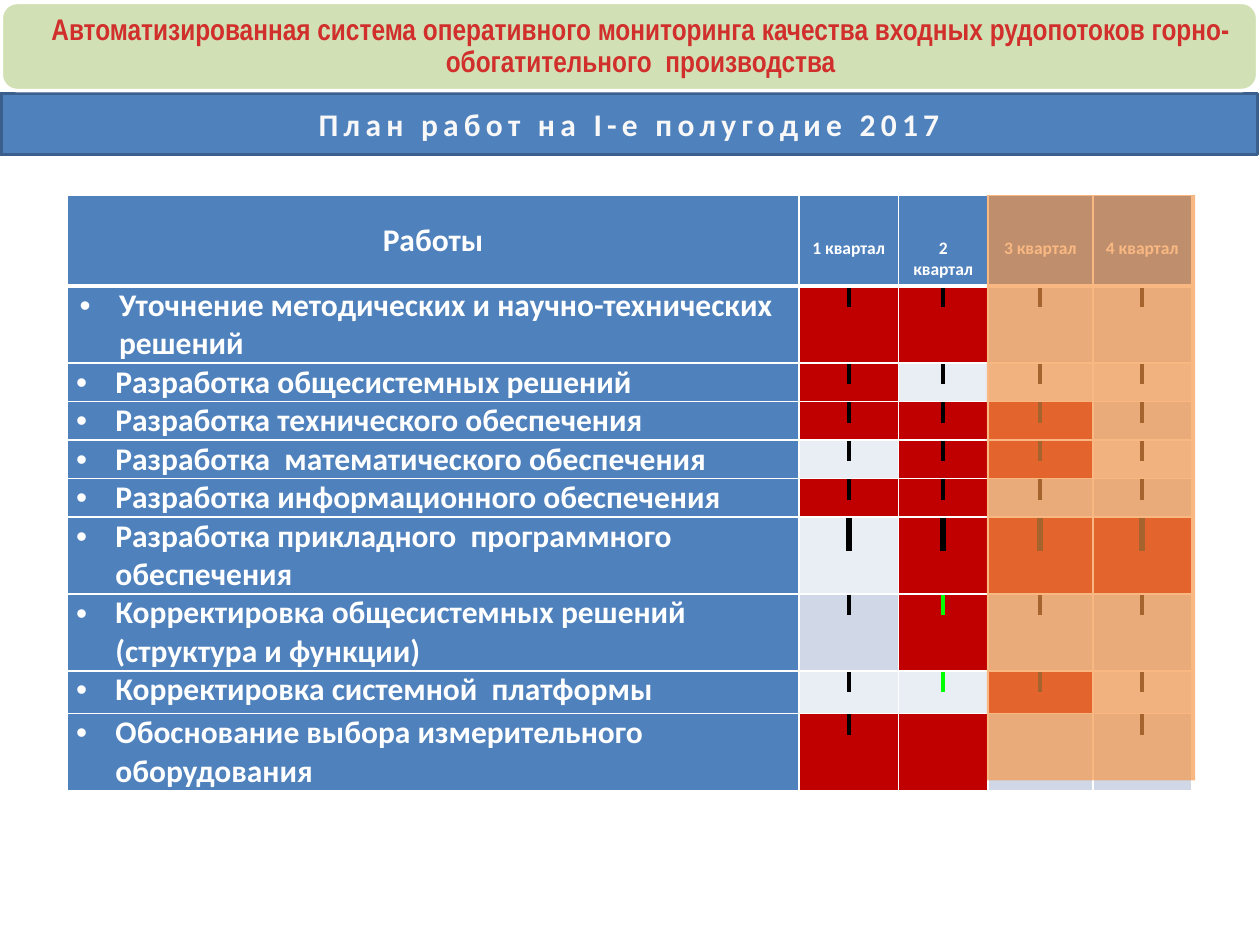
from lxml import etree
from pptx import Presentation
from pptx.dml.color import RGBColor
from pptx.enum import shapes, text
from pptx.oxml.ns import qn
from pptx.util import Pt

COLORS = {
    "blue": "4F81BD", "navy": "3A5F8C", "white": "FFFFFF", "pale": "F8F8F8",
    "red": "C00000", "odd": "D0D8E8", "even": "E9EDF4", "black": "000000",
    "lime": "00FF00", "green": "D2E1B5", "heading": "D02F2C", "orange": "F79646",
}


def rgb(name):
    return RGBColor.from_string(COLORS[name])


def write(paragraph, content, size=18, color="white", font="Calibri",
          align=None, spacing=0, highlight=None):
    paragraph.alignment = align
    run = paragraph.add_run()
    run.text = content
    run.font.size, run.font.bold, run.font.name = Pt(size), True, font
    run.font.color.rgb = rgb(color)
    properties = run.font._element
    if spacing:
        properties.set("spc", str(spacing * 100))
    if highlight:
        mark = etree.Element(qn("a:highlight"))
        etree.SubElement(mark, qn("a:srgbClr"), val=COLORS[highlight])
        properties.find(qn("a:solidFill")).addnext(mark)


CENTER = text.PP_ALIGN.CENTER
MIDDLE = text.MSO_ANCHOR.MIDDLE

deck = Presentation()
deck.slide_width, deck.slide_height = Pt(720), Pt(540)
slide = deck.slides.add_slide(deck.slide_layouts[5])

# Plan title band
plan = slide.shapes.title
plan.left, plan.top, plan.width, plan.height = Pt(0.7), Pt(53.5), Pt(718), Pt(34.8)
plan.fill.solid()
plan.fill.fore_color.rgb = rgb("blue")
plan.line.color.rgb = rgb("navy")
plan.line.width = Pt(2)
plan.text_frame.auto_size = text.MSO_AUTO_SIZE.NONE
plan.text_frame.vertical_anchor = MIDDLE
write(plan.text_frame.paragraphs[0], "План работ на I-е полугодие 2017",
      color="pale", align=CENTER, spacing=3)

# Schedule: work, row height, quarters in progress
works = [
    ("Уточнение методических и научно-технических решений", 23, (1, 2)),
    ("Разработка общесистемных решений", 18, (1,)),
    ("Разработка технического обеспечения", 15, (1, 2, 3)),
    ("Разработка  математического обеспечения", 19.5, (2, 3)),
    ("Разработка информационного обеспечения", 18, (1, 2)),
    ("Разработка прикладного  программного обеспечения", 18, (2, 3, 4)),
    ("Корректировка общесистемных решений  (структура и функции)", 20, (2,)),
    ("Корректировка системной  платформы", 24.5, (3,)),
    ("Обоснование выбора измерительного оборудования", 36, (1, 2)),
]
LARGE_MARK_ROW = 6
lime_marks = {(7, 2), (8, 2)}
unmarked = {(9, 2), (9, 3)}

schedule = slide.shapes.add_table(len(works) + 1, 5, Pt(38.5), Pt(111.5),
                                  Pt(642.5), Pt(244)).table
for column, width in zip(schedule.columns, (418, 57, 51, 60, 56.5)):
    column.width = Pt(width)
for row, height in zip(schedule.rows, [52] + [work[1] for work in works]):
    row.height = Pt(height)

# Header row
for quarter in range(5):
    cell = schedule.cell(0, quarter)
    if quarter:
        cell.margin_top = Pt(24.4)
        write(cell.text_frame.paragraphs[0], f"{quarter} квартал", size=10, align=CENTER)
    else:
        cell.vertical_anchor = MIDDLE
        write(cell.text_frame.paragraphs[0], "Работы", align=CENTER)

# Work names with bullets, quarter cells with marks
for number, (work, _, active) in enumerate(works, 1):
    name = schedule.cell(number, 0).text_frame.paragraphs[0]
    write(name, work)
    indent = name._p.get_or_add_pPr()
    indent.set("marL", str(Pt(29.5 if number == 1 else 22.5)))
    indent.set("indent", str(Pt(-22.5)))
    etree.SubElement(indent, qn("a:buFont"), typeface="Arial")
    etree.SubElement(indent, qn("a:buChar"), char="•")
    for quarter in range(1, 5):
        cell = schedule.cell(number, quarter)
        cell.fill.solid()
        band = "odd" if number % 2 else "even"
        cell.fill.fore_color.rgb = rgb("red" if quarter in active else band)
        if (number, quarter) not in unmarked:
            write(cell.text_frame.paragraphs[0], " ", align=CENTER,
                  size=16 if number == LARGE_MARK_ROW else 10, color="black",
                  highlight="lime" if (number, quarter) in lime_marks else "black")

# Cell margins, blue cells and white borders
for r in range(len(works) + 1):
    for c in range(5):
        cell = schedule.cell(r, c)
        cell.margin_left = Pt(0 if (r, c) == (1, 0) else 5)
        cell.margin_right, cell.margin_bottom = Pt(5), 0
        if r == 0 or c == 0:
            cell.fill.solid()
            cell.fill.fore_color.rgb = rgb("blue")
        if r or not c:
            cell.margin_top = 0
        properties = cell._tc.get_or_add_tcPr()
        for position, side in enumerate("LRTB"):
            heavy = (r == 0 and side == "B") or (r == 1 and side == "T")
            border = etree.Element(qn(f"a:ln{side}"), w=str(Pt(3 if heavy else 1)))
            paint = etree.SubElement(border, qn("a:solidFill"))
            etree.SubElement(paint, qn("a:srgbClr"), val=COLORS["white"])
            properties.insert(position, border)

# System name banner
system = slide.shapes.add_shape(shapes.MSO_SHAPE.ROUNDED_RECTANGLE,
                                Pt(0.7), Pt(1.4), Pt(718), Pt(50.4))
system.adjustments[0] = 0.18
system.shadow.inherit = False
system.fill.solid()
system.fill.fore_color.rgb = rgb("green")
system.line.color.rgb = rgb("white")
system.line.width = Pt(2)
banner = system.text_frame
banner.word_wrap = True
banner.vertical_anchor = MIDDLE
banner.margin_left = Pt(20)
banner.margin_right = banner.margin_top = banner.margin_bottom = Pt(7.2)
banner.paragraphs[0].line_spacing = 0.9
write(banner.paragraphs[0],
      "Автоматизированная система оперативного мониторинга качества входных "
      "рудопотоков горно-обогатительного  производства",
      size=17, color="heading", font="Arial Narrow", align=CENTER)

# Translucent cover over the second half-year
later = slide.shapes.add_shape(shapes.MSO_SHAPE.RECTANGLE,
                               Pt(564), Pt(111.5), Pt(119), Pt(334.5))
later.shadow.inherit = False
later.fill.solid()
later.fill.fore_color.rgb = rgb("orange")
tint = later._element.spPr.find(qn("a:solidFill"))[0]
etree.SubElement(tint, qn("a:alpha"), val="67000")
later.line.fill.background()

deck.save("out.pptx")
